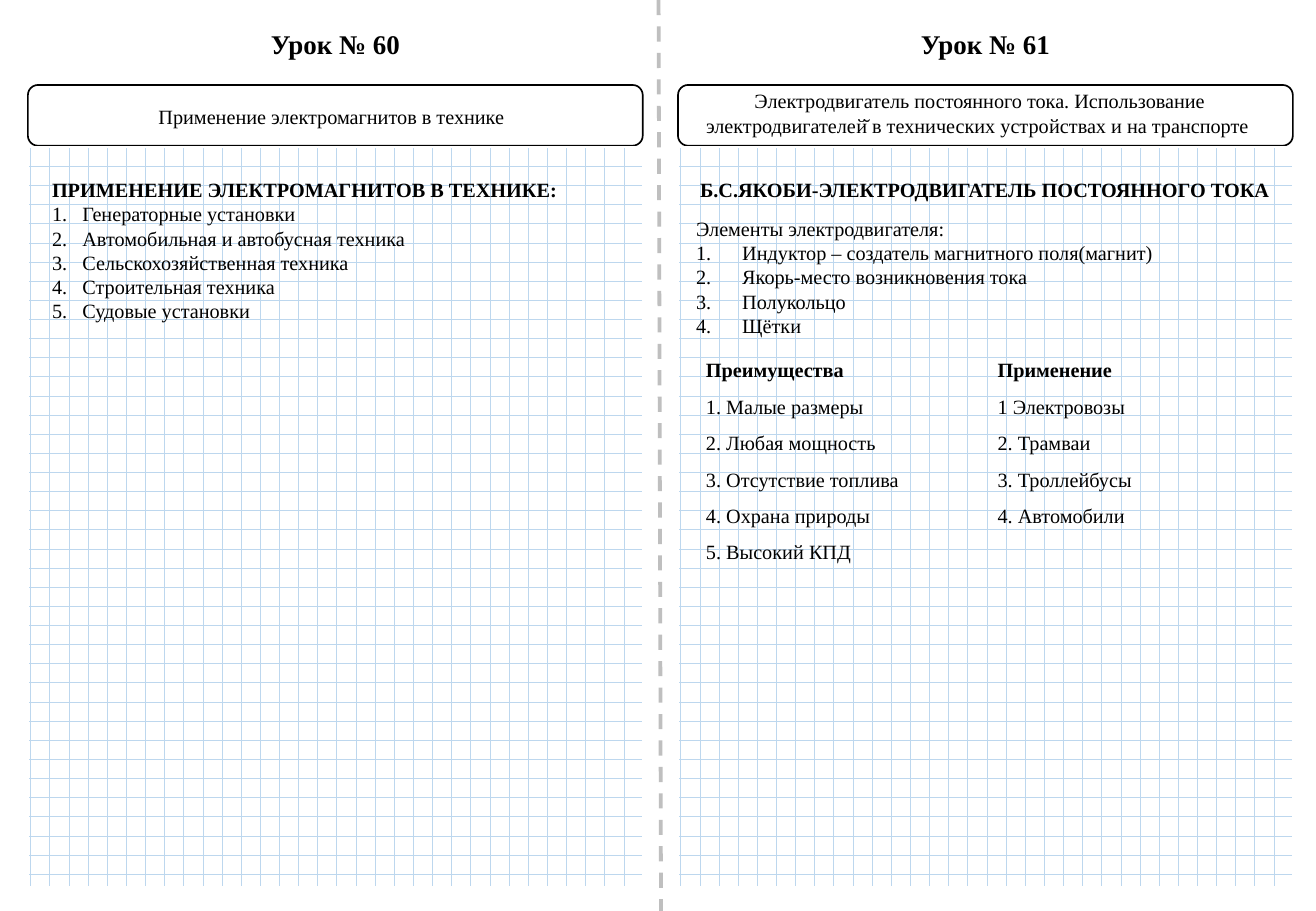
import pptx
import pptx.util
import pptx.dml.color
import pptx.enum.dml
import pptx.enum.shapes
import pptx.enum.text
import lxml.etree

Inches = pptx.util.Inches
Pt = pptx.util.Pt
Kind = pptx.enum.shapes.MSO_SHAPE
Align = pptx.enum.text.PP_ALIGN


def color(code):
    return pptx.dml.color.RGBColor.from_string(code)


def write(frame, lines, size=12, bold=False, center=False, indent=0):
    """Fill a text frame; lines after the first are numbered if indent is set."""
    frame.word_wrap = True
    frame.text = "\n".join(lines)
    for i, para in enumerate(frame.paragraphs):
        if center:
            para.alignment = Align.CENTER
        for run in para.runs:
            run.font.name = "Times New Roman"
            run.font.size = Pt(size)
            run.font.bold = bold and i == 0
            run.font.color.rgb = color("000000")
        if indent and i:
            props = para._p.get_or_add_pPr()
            props.set("marL", str(Inches(indent)))
            props.set("indent", str(-Inches(indent)))
            mark = lxml.etree.SubElement(props, pptx.oxml.ns.qn("a:buAutoNum"))
            mark.set("type", "arabicPeriod")


deck = pptx.Presentation()
deck.slide_width = Inches(10.83)
deck.slide_height = Inches(7.5)
slide = deck.slides.add_slide(deck.slide_layouts[6])
shapes = slide.shapes

# Dashed fold line between the pages
fold = shapes.add_connector(pptx.enum.shapes.MSO_CONNECTOR.STRAIGHT,
                            Inches(5.42), 0, Inches(5.44), Inches(7.5))
fold.line.color.rgb = color("BFBFBF")
fold.line.width = Pt(2.25)
fold.line.dash_style = pptx.enum.dml.MSO_LINE.DASH
lxml.etree.SubElement(fold._element.spPr, pptx.oxml.ns.qn("a:effectLst"))

# Page frames: lesson title, topic frame, squared paper
for left, title in [(0.23, "Урок № 60"), (5.58, "Урок № 61")]:
    head = shapes.add_textbox(Inches(left), Inches(0.18), Inches(5.06), Inches(0.37))
    write(head.text_frame, [title], size=16, bold=True, center=True)

    topic = shapes.add_shape(Kind.FLOWCHART_ALTERNATE_PROCESS,
                             Inches(left), Inches(0.7), Inches(5.06), Inches(0.5))
    topic.fill.solid()
    topic.fill.fore_color.rgb = color("FFFFFF")
    topic.line.color.rgb = color("000000")

    paper = shapes.add_shape(Kind.FLOWCHART_PROCESS,
                             Inches(left), Inches(1.21), Inches(5.06), Inches(6.09))
    paper.fill.patterned()
    paper.fill.pattern = pptx.enum.dml.MSO_PATTERN.DOTTED_GRID
    paper.fill.fore_color.rgb = color("BDD7EE")
    paper.fill.back_color.rgb = color("FFFFFF")
    paper.line.color.rgb = color("FFFFFF")

    for shape in (topic, paper):
        shape.line.width = Pt(1)
        shape.shadow.inherit = False

# Topics, headings and numbered lists
texts = [
    (0.33, 0.81, 4.84, 0.3, ["Применение электромагнитов в технике "],
     {"center": True}),
    (5.5, 0.68, 5.13, 0.5,
     ["Электродвигатель постоянного тока. Использование электродвигателей̆ "
      "в технических устройствах и на транспорте "],
     {"center": True}),
    (0.33, 1.41, 4.84, 1.72,
     ["ПРИМЕНЕНИЕ ЭЛЕКТРОМАГНИТОВ В ТЕХНИКЕ:",
      "Генераторные установки",
      "Автомобильная и автобусная техника",
      "Сельскохозяйственная техника",
      "Строительная техника",
      "Судовые установки"],
     {"bold": True, "indent": 0.25}),
    (5.63, 1.41, 4.95, 0.3, ["Б.С.ЯКОБИ-ЭЛЕКТРОДВИГАТЕЛЬ ПОСТОЯННОГО ТОКА"],
     {"bold": True, "center": True}),
    (5.63, 1.73, 4.65, 1.11,
     ["Элементы электродвигателя:",
      "Индуктор – создатель магнитного поля(магнит)",
      "Якорь-место возникновения тока",
      "Полукольцо",
      "Щётки"],
     {"indent": 0.38}),
]
for left, top, width, height, lines, style in texts:
    box = shapes.add_textbox(Inches(left), Inches(top), Inches(width), Inches(height))
    write(box.text_frame, lines, **style)

# Table of advantages and uses
rows = [
    ("Преимущества", "Применение"),
    ("1. Малые размеры", "1 Электровозы"),
    ("2. Любая мощность", "2. Трамваи"),
    ("3. Отсутствие топлива", "3. Троллейбусы"),
    ("4. Охрана природы", "4. Автомобили"),
    ("5. Высокий КПД", ""),
]
table = shapes.add_table(len(rows), 2, Inches(5.71), Inches(2.91),
                         Inches(4.8), Inches(1.8)).table
table.first_row = False
table.horz_banding = False
plain = "{2D5ABB26-0587-4C30-8999-92F81FD0307C}"
table._tbl.tblPr.find(pptx.oxml.ns.qn("a:tableStyleId")).text = plain
for r, row in enumerate(rows):
    for c, words in enumerate(row):
        cell = table.cell(r, c)
        cell.fill.background()
        if words:
            write(cell.text_frame, [words], bold=r == 0)
        else:
            cell.text_frame.paragraphs[0].font.size = Pt(12)

deck.save("out.pptx")
